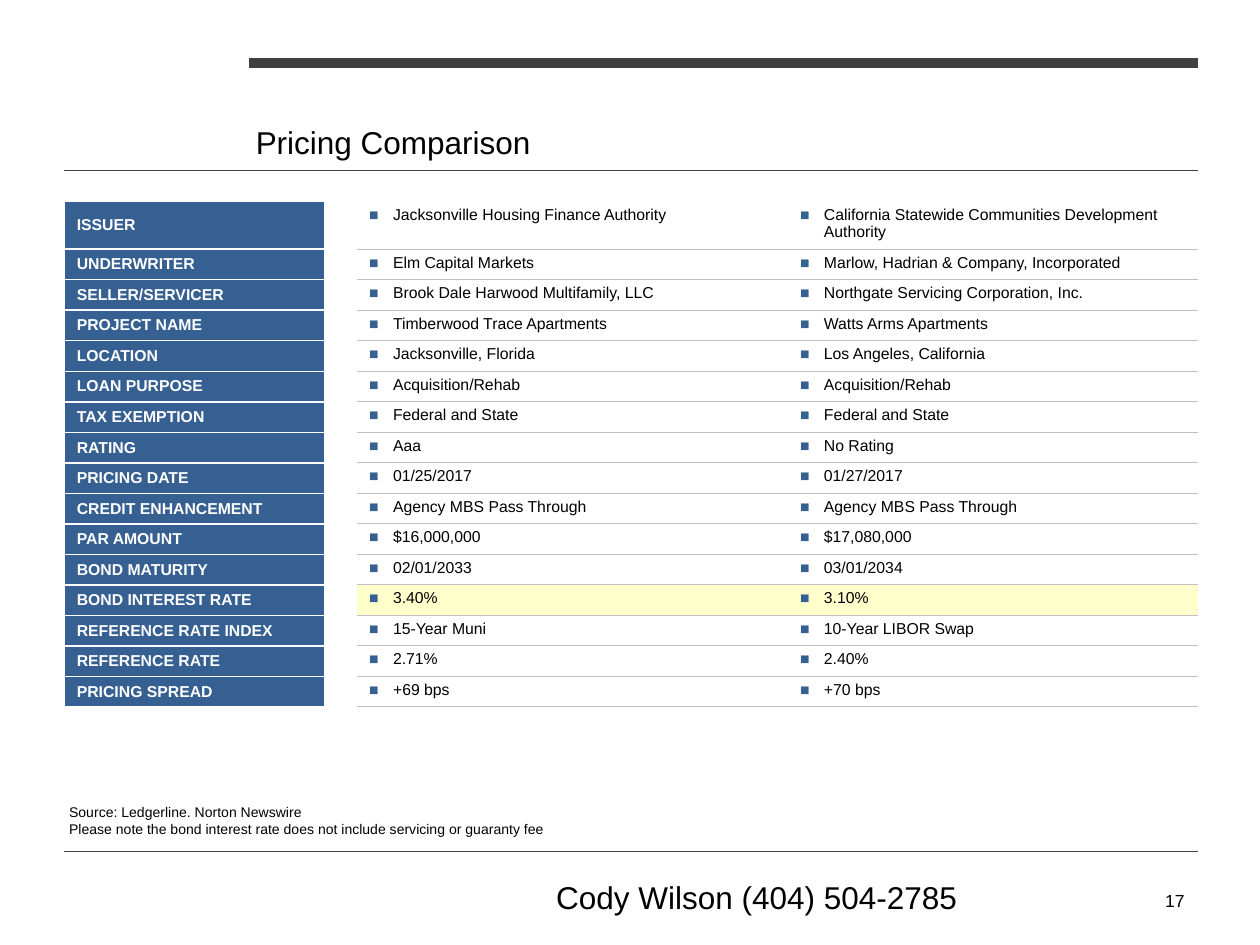
from lxml.etree import SubElement
from pptx import Presentation
from pptx.dml.color import RGBColor
from pptx.enum.shapes import MSO_CONNECTOR
from pptx.enum.text import MSO_ANCHOR, MSO_AUTO_SIZE, PP_ALIGN
from pptx.oxml import parse_xml
from pptx.oxml.ns import nsdecls, qn
from pptx.util import Inches, Pt

COLORS = {
    "text": "000000",
    "paper": "FFFFFF",
    "rule": "404040",
    "label": "376092",
    "grid": "BFBFBF",
    "highlight": "FFFFCC",
}

# Label, first bond issue, second bond issue
COMPARISON = [
    ("ISSUER", "Jacksonville Housing Finance Authority",
     "California Statewide Communities Development Authority"),
    ("UNDERWRITER", "Elm Capital Markets", "Marlow, Hadrian & Company, Incorporated"),
    ("SELLER/SERVICER", "Brook Dale Harwood Multifamily, LLC",
     "Northgate Servicing Corporation, Inc."),
    ("PROJECT NAME", "Timberwood Trace Apartments", "Watts Arms Apartments"),
    ("LOCATION", "Jacksonville, Florida", "Los Angeles, California"),
    ("LOAN PURPOSE", "Acquisition/Rehab", "Acquisition/Rehab"),
    ("TAX EXEMPTION", "Federal and State", "Federal and State"),
    ("RATING", "Aaa", "No Rating"),
    ("PRICING DATE", "01/25/2017", "01/27/2017"),
    ("CREDIT ENHANCEMENT", "Agency MBS Pass Through", "Agency MBS Pass Through"),
    ("PAR AMOUNT", "$16,000,000", "$17,080,000"),
    ("BOND MATURITY", "02/01/2033", "03/01/2034"),
    ("BOND INTEREST RATE", "3.40%", "3.10%"),
    ("REFERENCE RATE INDEX", "15-Year Muni", "10-Year LIBOR Swap"),
    ("REFERENCE RATE", "2.71%", "2.40%"),
    ("PRICING SPREAD", "+69 bps", "+70 bps"),
]
HIGHLIGHTED = "BOND INTEREST RATE"


class SlideBuilder:
    """Holds the style and the current slide; lengths are grid units of 0.1 inch."""

    font_name = "Arial"
    columns, rows = 100, 75

    def __init__(self, presentation):
        self.unit = Inches(0.1)
        presentation.slide_width = self.size(self.columns)
        presentation.slide_height = self.size(self.rows)
        self.slide = presentation.slides.add_slide(presentation.slide_layouts[5])

    def size(self, units):
        return round(units * self.unit)

    def color(self, name):
        return RGBColor.from_string(COLORS[name])

    def run(self, paragraph, text, size, color="text", bold=False):
        run = paragraph.add_run()
        run.text = text
        run.font.name = self.font_name
        run.font.size = Pt(size)
        run.font.bold = bold
        run.font.color.rgb = self.color(color)

    def title(self, text, left, top, width, height):
        shape = self.slide.shapes.title
        shape.left, shape.top, shape.width, shape.height = map(
            self.size, (left, top, width, height))
        frame = shape.text_frame
        frame.auto_size = MSO_AUTO_SIZE.NONE
        frame.vertical_anchor = MSO_ANCHOR.BOTTOM
        frame.margin_left = self.size(0.5)
        frame.paragraphs[0].alignment = PP_ALIGN.LEFT
        self.run(frame.paragraphs[0], text, 18)

    def text(self, lines, left, top, width, height, size,
             align=PP_ALIGN.LEFT, anchor=MSO_ANCHOR.TOP, wrap=True):
        shape = self.slide.shapes.add_textbox(
            *map(self.size, (left, top, width, height)))
        frame = shape.text_frame
        frame.word_wrap = wrap
        frame.vertical_anchor = anchor
        for index, line in enumerate(lines):
            paragraph = frame.add_paragraph() if index else frame.paragraphs[0]
            paragraph.alignment = align
            self.run(paragraph, line, size)

    def rule(self, left, right, top, weight):
        line = self.slide.shapes.add_connector(
            MSO_CONNECTOR.STRAIGHT, *map(self.size, (left, top, right, top)))
        line.line.color.rgb = self.color("rule")
        line.line.width = Pt(weight)
        SubElement(line._element.spPr, qn("a:effectLst"))

    def borders(self, cell, **sides):
        """Set each side to (colour name, points); sides left out get no line."""
        properties = cell._tc.get_or_add_tcPr()
        for index, side in enumerate("LRTB"):
            color, weight = sides.get(side, (None, 0))
            paint = (f'<a:solidFill><a:srgbClr val="{COLORS[color]}"/></a:solidFill>'
                     if color else "<a:noFill/>")
            properties.insert(index, parse_xml(
                f'<a:ln{side} {nsdecls("a")} w="{Pt(weight)}">{paint}</a:ln{side}>'))

    def bullet(self, paragraph):
        properties = paragraph._p.get_or_add_pPr()
        indent = self.size(1.9)
        properties.set("marL", str(indent))
        properties.set("indent", str(-indent))
        color = SubElement(properties, qn("a:buClr"))
        SubElement(color, qn("a:srgbClr")).set("val", COLORS["label"])
        SubElement(properties, qn("a:buFont")).set("typeface", self.font_name)
        SubElement(properties, qn("a:buChar")).set("char", "■")

    def cell(self, cell, fill, text="", size=9, label=False):
        cell.fill.solid()
        cell.fill.fore_color.rgb = self.color(fill)
        cell.margin_top = cell.margin_bottom = self.size(0.45)
        paragraph = cell.text_frame.paragraphs[0]
        if not text:
            # Keeps blank cells from stretching the row
            SubElement(paragraph._p, qn("a:endParaRPr")).set("sz", str(size * 100))
        elif label:
            cell.vertical_anchor = MSO_ANCHOR.MIDDLE
            self.run(paragraph, text, size, "paper", bold=True)
        else:
            paragraph.line_spacing = 0.95
            self.bullet(paragraph)
            self.run(paragraph, text, size)

    def comparison_table(self, records, left, top, widths, first_height, row_height):
        heights = [first_height] + [row_height] * (len(records) - 1)
        table = self.slide.shapes.add_table(
            len(records), len(widths),
            *map(self.size, (left, top, sum(widths), sum(heights)))).table
        table.first_row = table.horz_banding = False
        for column, width in zip(table.columns, widths):
            column.width = self.size(width)
        white, grey = ("paper", 1), ("grid", 0.5)
        for index, (label, first, second) in enumerate(records):
            table.rows[index].height = self.size(heights[index])
            label_cell, gap, *values = table.rows[index].cells
            self.cell(label_cell, "label", label, label=True)
            self.borders(label_cell, L=white, R=white, T=white, B=white)
            self.cell(gap, "paper")
            self.borders(gap, L=white)
            fill = "highlight" if label == HIGHLIGHTED else "paper"
            sides = {"T": grey, "B": grey} if index else {"B": grey}
            for value_cell, text in zip(values, (first, "", second)):
                self.cell(value_cell, fill, text)
                self.borders(value_cell, **sides)


def main():
    presentation = Presentation()
    builder = SlideBuilder(presentation)
    left, right, indent = 5.1, 95.1, 19.8

    # Frame rules
    builder.rule(left, right, 13.5, 0.5)
    builder.rule(left, right, 67.6, 0.5)
    builder.rule(indent, right, 5, 6)

    # Title and comparison
    builder.title("Pricing Comparison", indent, 5, 75.2, 8.3)
    builder.comparison_table(COMPARISON, left, 16, (20.7, 2.5, 30.8, 3.4, 32.6),
                             3.78, 2.4)

    # Notes and footer
    builder.text(["Source: Ledgerline. Norton Newswire",
                  "Please note the bond interest rate does not include "
                  "servicing or guaranty fee"],
                 4.5, 63.3, 40.2, 3.7, 8, wrap=False)
    builder.text(["Cody Wilson (404) 504-2785"], 39.2, 69.2, 41.7, 4, 18,
                 align=PP_ALIGN.CENTER)
    builder.text(["17"], 71.7, 69.5, 23.3, 4, 10,
                 align=PP_ALIGN.RIGHT, anchor=MSO_ANCHOR.MIDDLE)

    presentation.save("out.pptx")


if __name__ == "__main__":
    main()
